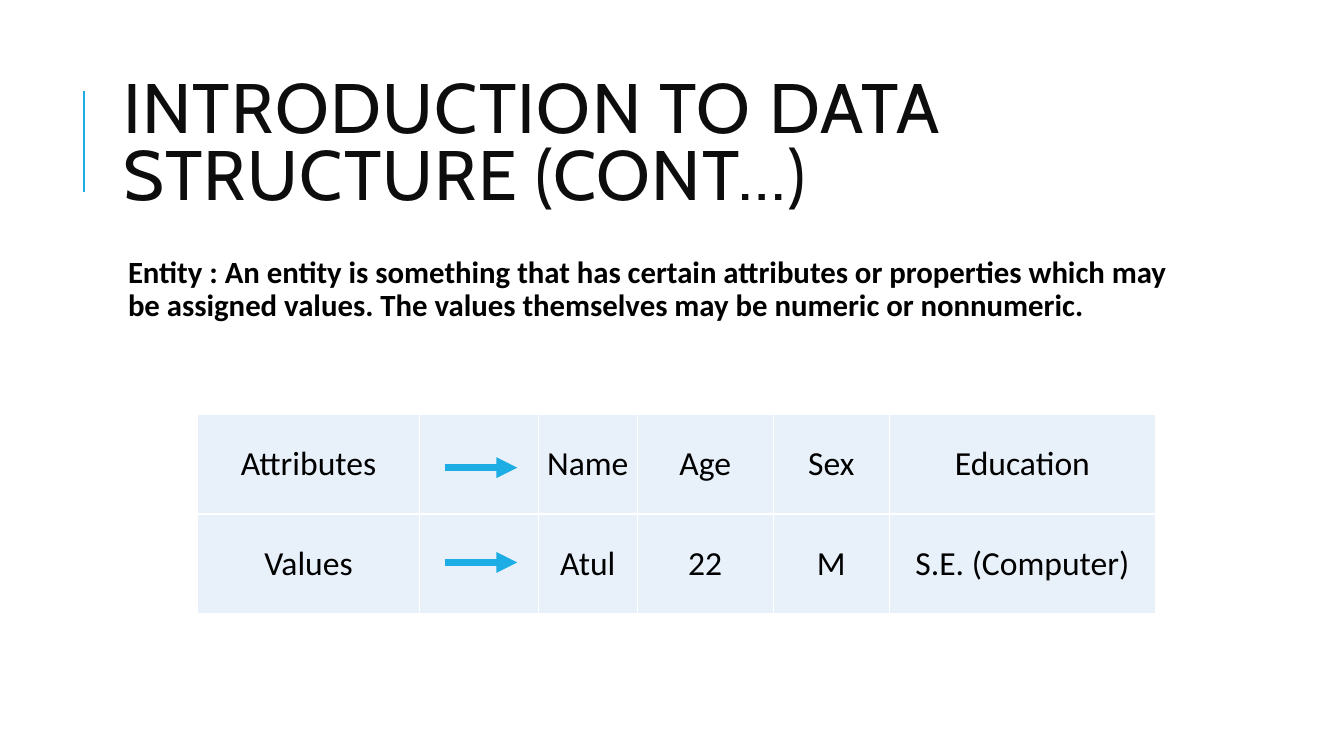
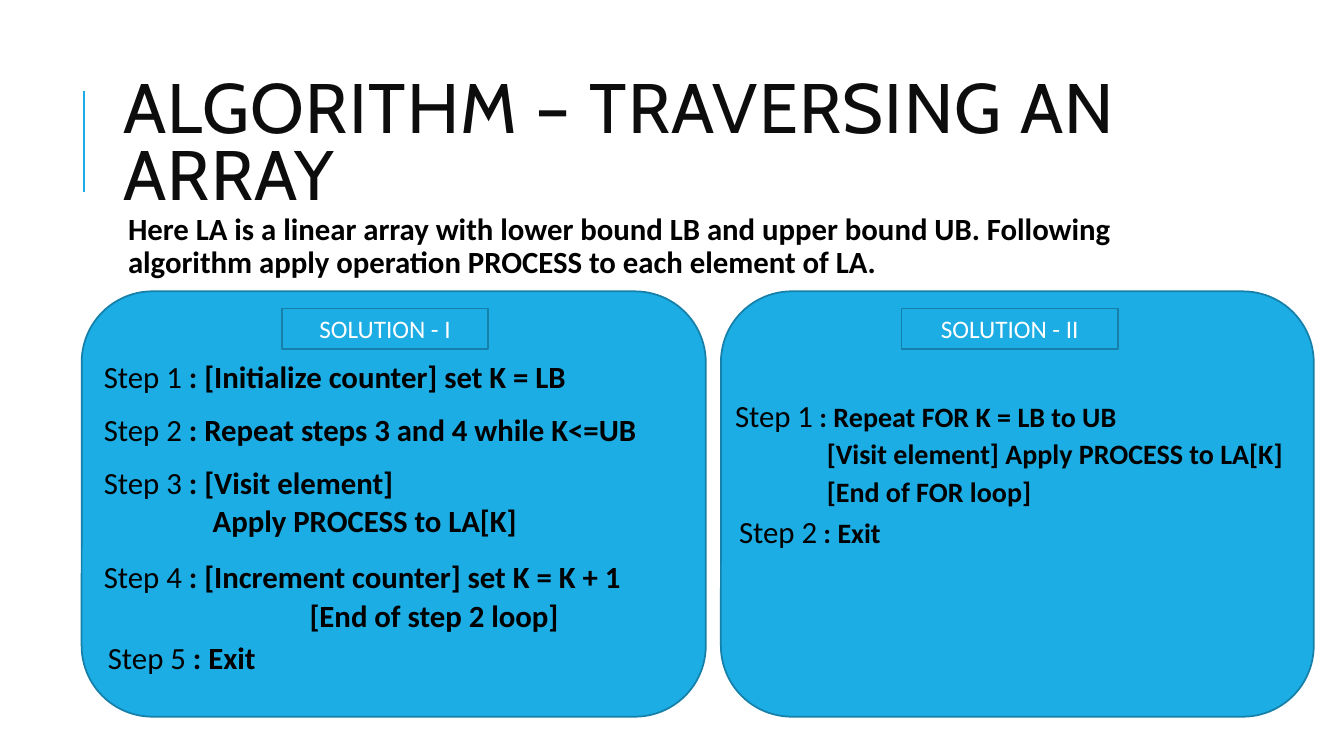
import dataclasses
import pptx
import pptx.dml.color
import pptx.enum.shapes
import pptx.enum.text
import pptx.oxml
import pptx.oxml.ns
import pptx.util
from lxml import etree

Inches = pptx.util.Inches
Pt = pptx.util.Pt
qn = pptx.oxml.ns.qn
ALIGN = pptx.enum.text.PP_ALIGN
ANCHOR = pptx.enum.text.MSO_ANCHOR
SHAPE = pptx.enum.shapes.MSO_SHAPE
LINE = pptx.enum.shapes.MSO_CONNECTOR


def rgb(code):
    return pptx.dml.color.RGBColor.from_string(code)


@dataclasses.dataclass(frozen=True)
class Theme:
    blue: object = rgb("1CADE4")
    edge: object = rgb("1580A9")
    pale: object = rgb("E8F1FA")
    white: object = rgb("FFFFFF")
    black: object = rgb("000000")
    ink: object = rgb("0D0D0D")
    head: str = "Cabin"
    body: str = "Calibri"
    title: int = 50
    cell: int = 24
    text: int = 22
    small: int = 20
    label: int = 18


THEME = Theme()
LEAD = (12, 2)  # space before and after a main line
SUB = (2, 4)    # space before and after a lower line


# Shared helpers
def set_font(para, size, color=THEME.black, name=THEME.body, bold=False):
    font = para.font
    font.name, font.size, font.bold = name, Pt(size), bold
    font.color.rgb = color


def set_pad(frame, pad):
    frame.margin_left = frame.margin_right = Inches(pad)
    frame.margin_top = frame.margin_bottom = Inches(pad)


def set_space(para, indent, space):
    para.line_spacing = 0.9
    para.space_before, para.space_after = map(Pt, space)
    para._p.get_or_add_pPr().set("marL", str(Inches(indent)))


def add_line(slide, start, end, width, arrow=False):
    line = slide.shapes.add_connector(
        LINE.STRAIGHT, *map(Inches, (*start, *end)))
    line.line.color.rgb = THEME.blue
    line.line.width = Pt(width)
    props = line.element.spPr
    if arrow:
        etree.SubElement(props.find(qn("a:ln")), qn("a:tailEnd"),
                         type="triangle")
    etree.SubElement(props, qn("a:effectLst"))


def add_block(slide, kind, box):
    block = slide.shapes.add_shape(kind, *map(Inches, box))
    block.shadow.inherit = False
    block.fill.solid()
    block.fill.fore_color.rgb = THEME.blue
    block.line.color.rgb = THEME.edge
    block.line.width = Pt(1.25)
    return block


def add_text(slide, box):
    frame = slide.shapes.add_textbox(*map(Inches, box)).text_frame
    frame.word_wrap = True
    set_pad(frame, 0.05)
    return frame


# Title with its side rule
def add_title(slide, text, box=(1.12, 0.64, 10.63, 1.64)):
    title = slide.shapes.title
    title.left, title.top, title.width, title.height = map(Inches, box)
    frame = title.text_frame
    frame.text = text
    frame.auto_size = pptx.enum.text.MSO_AUTO_SIZE.NONE
    frame.vertical_anchor = ANCHOR.MIDDLE
    para = frame.paragraphs[0]
    para.alignment = ALIGN.LEFT
    para.line_spacing = 0.8
    set_font(para, THEME.title, THEME.ink, THEME.head)
    for run in title.element.iter(qn("a:r")):
        run.get_or_add_rPr().set("spc", "100")
    left, top = box[0] - 0.29, box[1] + 0.26
    add_line(slide, (left, top + 1), (left, top), 1.5)


# Bold statement under the title
def add_intro(slide, text, box):
    para = add_text(slide, box).paragraphs[0]
    para.text = text
    set_space(para, 0.1, LEAD)
    set_font(para, THEME.text, bold=True)


# Table of attributes and values, with arrows in its second column
def add_grid(slide, rows, left, top, widths, height):
    shape = slide.shapes.add_table(
        len(rows), len(widths), Inches(left), Inches(top),
        Inches(sum(widths)), Inches(height * len(rows)))
    table = shape.table
    table.first_row = table.horz_banding = False
    for col, width in zip(table.columns, widths):
        col.width = Inches(width)
    for index, row in enumerate(rows):
        table.rows[index].height = Inches(height)
        for cell, text in zip(table.rows[index].cells, row):
            fill_cell(cell, text)
    for props in shape.element.iter(qn("a:tcPr")):
        for place, side in enumerate(("lnL", "lnR", "lnT", "lnB")):
            props.insert(place, pptx.oxml.parse_xml(
                f'<a:{side} {pptx.oxml.ns.nsdecls("a")} w="{Pt(1)}">'
                f'<a:solidFill><a:srgbClr val="{THEME.white}"/></a:solidFill>'
                f'</a:{side}>'))
    start = left + widths[0] + 0.25
    for drop in (0.53, 1.47):
        add_line(slide, (start, top + drop), (start + 0.72, top + drop),
                 5, arrow=True)


def fill_cell(cell, text):
    cell.fill.solid()
    cell.fill.fore_color.rgb = THEME.pale
    if text:
        cell.text = text
        cell.vertical_anchor = ANCHOR.MIDDLE
        set_pad(cell, 0.01)
        para = cell.text_frame.paragraphs[0]
        para.alignment = ALIGN.CENTER
        set_font(para, THEME.cell)


# Rounded panel with a label and steps; tag is (offset, width)
def add_panel(slide, box, name, tag, shift, steps, size):
    left, top, width, height = box
    add_block(slide, SHAPE.ROUNDED_RECTANGLE, box)
    label = add_block(slide, SHAPE.RECTANGLE,
                      (left + tag[0], top + 0.17, tag[1], 0.4))
    frame = label.text_frame
    frame.text = name
    frame.vertical_anchor = ANCHOR.MIDDLE
    frame.paragraphs[0].alignment = ALIGN.CENTER
    set_font(frame.paragraphs[0], THEME.label, THEME.white)

    frame = add_text(slide, (left + shift[0], top + shift[1],
                             width, height - shift[1]))
    for index, (step, text, indent, space) in enumerate(steps):
        para = frame.add_paragraph() if index else frame.paragraphs[0]
        set_space(para, indent, space)
        set_font(para, size, bold=True)
        if step:
            run = para.add_run()
            run.text = step
            run.font.bold = False
            run.font.size = Pt(THEME.text)
            text = " : " + text
        para.add_run().text = text


# Slides
def add_slide(deck, title):
    slide = deck.slides.add_slide(deck.slide_layouts[5])
    add_title(slide, title)
    return slide


def make_intro(deck):
    slide = add_slide(deck, "INTRODUCTION TO DATA STRUCTURE (CONT…)")
    add_intro(slide, "Entity : An entity is something that has certain "
              "attributes or properties which may be assigned values. The "
              "values themselves may be numeric or nonnumeric.",
              (1.12, 2.5, 10.63, 4.4))
    rows = [("Attributes", "", "Name", "Age", "Sex", "Education"),
            ("Values", "", "Atul", "22", "M", "S.E. (Computer)")]
    add_grid(slide, rows, 1.96, 4.11,
             (2.2, 1.18, 0.98, 1.35, 1.15, 2.64), 0.99)


def make_steps(deck):
    slide = add_slide(deck, "ALGORITHM – TRAVERSING AN ARRAY")
    add_intro(slide, "Here LA is a linear array with lower bound LB and "
              "upper bound UB. Following algorithm apply operation PROCESS "
              "to each element of LA.", (1.12, 2.07, 10.63, 0.82))
    first = [("Step 1", "[Initialize counter] set K = LB", 0.1, LEAD),
             ("Step 2", "Repeat steps 3 and 4 while K<=UB", 0.1, LEAD),
             ("Step 3", "[Visit element]", 0.1, LEAD),
             ("", "Apply PROCESS to LA[K]", 1.18, SUB),
             ("Step 4", "[Increment counter] set K = K + 1", 0.1, LEAD),
             ("", "[End of step 2 loop]", 2.14, SUB),
             ("Step 5", "Exit", 0.14, SUB)]
    second = [("Step 1", "Repeat FOR K = LB to UB", 0.1, LEAD),
              ("", "[Visit element] Apply PROCESS to LA[K]", 1.01, SUB),
              ("", "[End of FOR loop]", 1.01, SUB),
              ("Step 2", "Exit", 0.14, SUB)]
    add_panel(slide, (0.81, 2.89, 6.19, 4.22), "SOLUTION - I",
              (1.99, 2.04), (0.07, 0.65), first, THEME.text)
    add_panel(slide, (7.15, 2.89, 5.88, 4.22), "SOLUTION - II",
              (1.79, 2.15), (-0.01, 1.04), second, THEME.small)


def main():
    deck = pptx.Presentation()
    deck.slide_width, deck.slide_height = Inches(13.33), Inches(7.5)
    make_intro(deck)
    make_steps(deck)
    deck.save("out.pptx")


if __name__ == "__main__":
    main()
